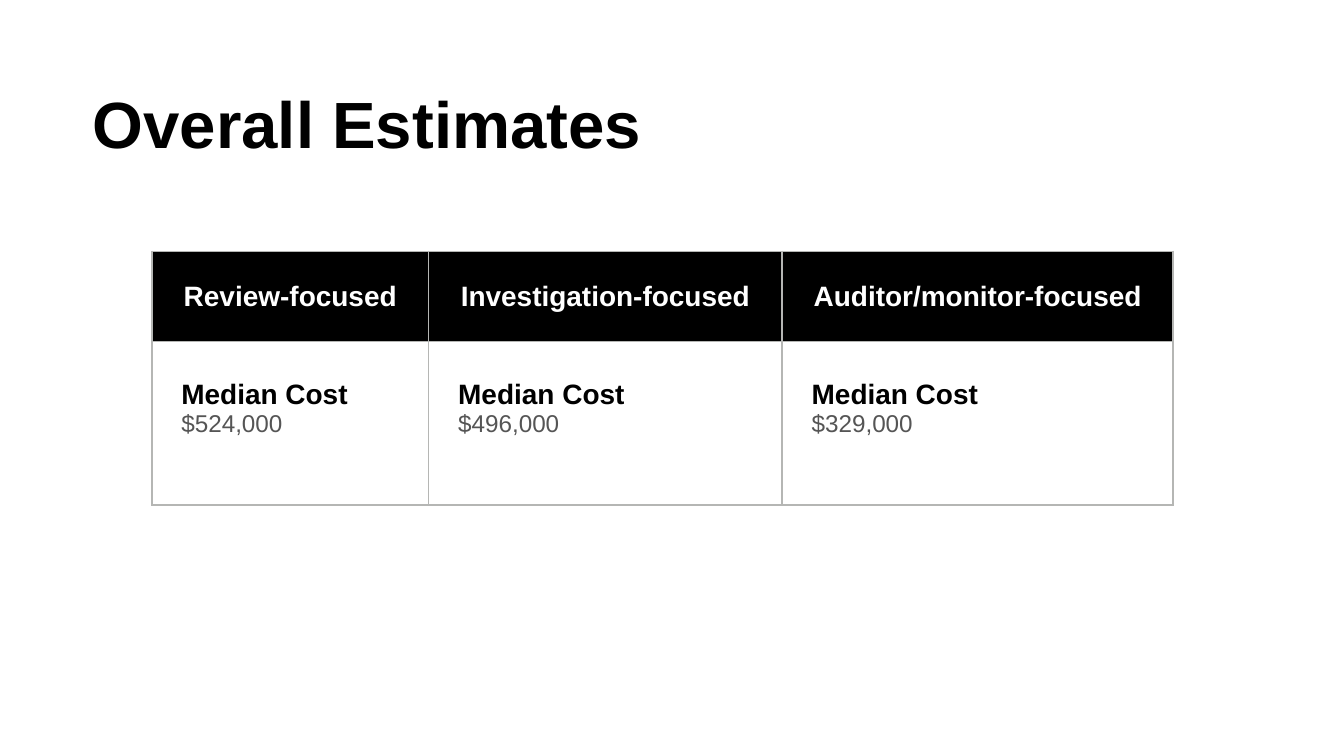
from pptx import Presentation
from pptx.dml.color import RGBColor
from pptx.enum.text import MSO_ANCHOR, PP_ALIGN
from pptx.oxml import parse_xml
from pptx.oxml.ns import nsdecls
from pptx.util import Inches, Pt

BLACK = RGBColor(0x00, 0x00, 0x00)
WHITE = RGBColor(0xFF, 0xFF, 0xFF)
GRAY = RGBColor(0x55, 0x55, 0x55)
BORDER = RGBColor(0xB5, 0xB6, 0xB4)

ESTIMATES = [
    ("Review-focused", "$524,000", 2.06),
    ("Investigation-focused", "$496,000", 2.63),
    ("Auditor/monitor-focused", "$329,000", 2.91),
]
ROW_HEIGHTS = [0.67, 1.22]


def write(para, text, *, size, color, bold=False, align=PP_ALIGN.LEFT, spacing=None):
    """Add formatted text to a paragraph."""
    para.alignment = align
    para.line_spacing = spacing
    span = para.add_run()
    span.text = text
    span.font.name = "Arial"
    span.font.size = Pt(size)
    span.font.bold = bold
    span.font.color.rgb = color


def add_title(page, text):
    """Add the slide heading."""
    box = page.shapes.add_textbox(Inches(0.69), Inches(0.67), Inches(8.62), Inches(0.56))
    frame = box.text_frame
    frame.word_wrap = True
    frame.vertical_anchor = MSO_ANCHOR.MIDDLE
    frame.margin_left, frame.margin_right = Inches(0), Inches(0.04)
    frame.margin_top = frame.margin_bottom = Inches(0.02)
    write(frame.paragraphs[0], text, size=35, color=BLACK, bold=True, spacing=0.9)


def style_cell(cell, fill, bottom=0.07):
    """Set the fill, margins and borders of a cell."""
    cell.fill.solid()
    cell.fill.fore_color.rgb = fill
    cell.vertical_anchor = MSO_ANCHOR.MIDDLE
    cell.margin_left = cell.margin_right = Inches(0.22)
    cell.margin_top, cell.margin_bottom = Inches(0.07), Inches(bottom)
    properties = cell._tc.get_or_add_tcPr()
    for position, side in enumerate(("lnL", "lnR", "lnT", "lnB")):
        line = parse_xml(
            f'<a:{side} {nsdecls("a")} w="{Pt(1)}"><a:solidFill>'
            f'<a:srgbClr val="{BORDER}"/></a:solidFill></a:{side}>'
        )
        properties.insert(position, line)


def add_estimates(page):
    """Add the table with one column for each kind of focus."""
    widths = [width for _, _, width in ESTIMATES]
    table = page.shapes.add_table(
        len(ROW_HEIGHTS), len(ESTIMATES), Inches(1.13), Inches(1.87),
        Inches(sum(widths)), Inches(sum(ROW_HEIGHTS)),
    ).table
    table.horz_banding = False
    for row, height in zip(table.rows, ROW_HEIGHTS):
        row.height = Inches(height)
    for index, (focus, cost, width) in enumerate(ESTIMATES):
        table.columns[index].width = Inches(width)
        header, body = table.cell(0, index), table.cell(1, index)
        style_cell(header, BLACK)
        write(header.text_frame.paragraphs[0], focus, size=15, color=WHITE,
              bold=True, align=PP_ALIGN.CENTER)
        style_cell(body, WHITE, bottom=0.29)
        write(body.text_frame.paragraphs[0], "Median Cost", size=15, color=BLACK, bold=True)
        write(body.text_frame.add_paragraph(), cost, size=13, color=GRAY)


def main():
    """Build and save the slide."""
    deck = Presentation()
    deck.slide_width, deck.slide_height = Inches(10), Inches(10 * 9 / 16)
    page = deck.slides.add_slide(deck.slide_layouts[6])
    add_estimates(page)
    add_title(page, "Overall Estimates")
    deck.save("out.pptx")


if __name__ == "__main__":
    main()
